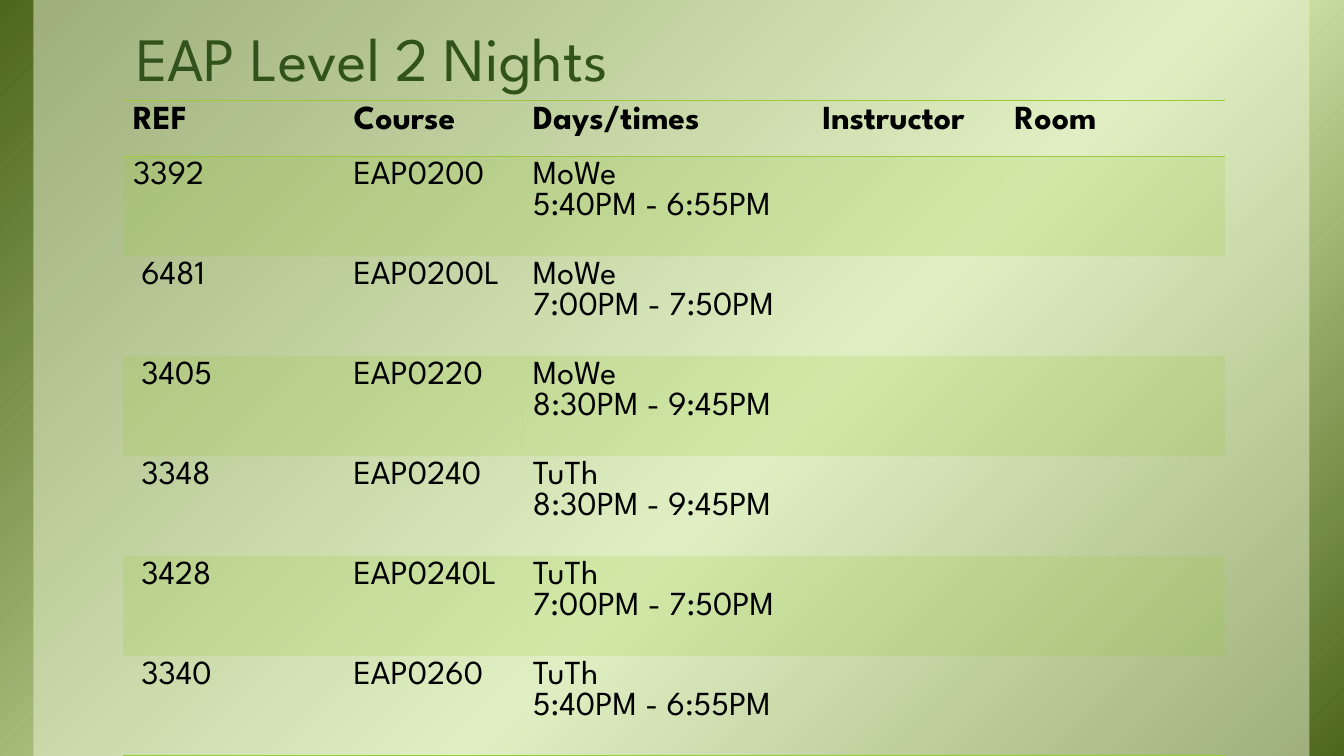
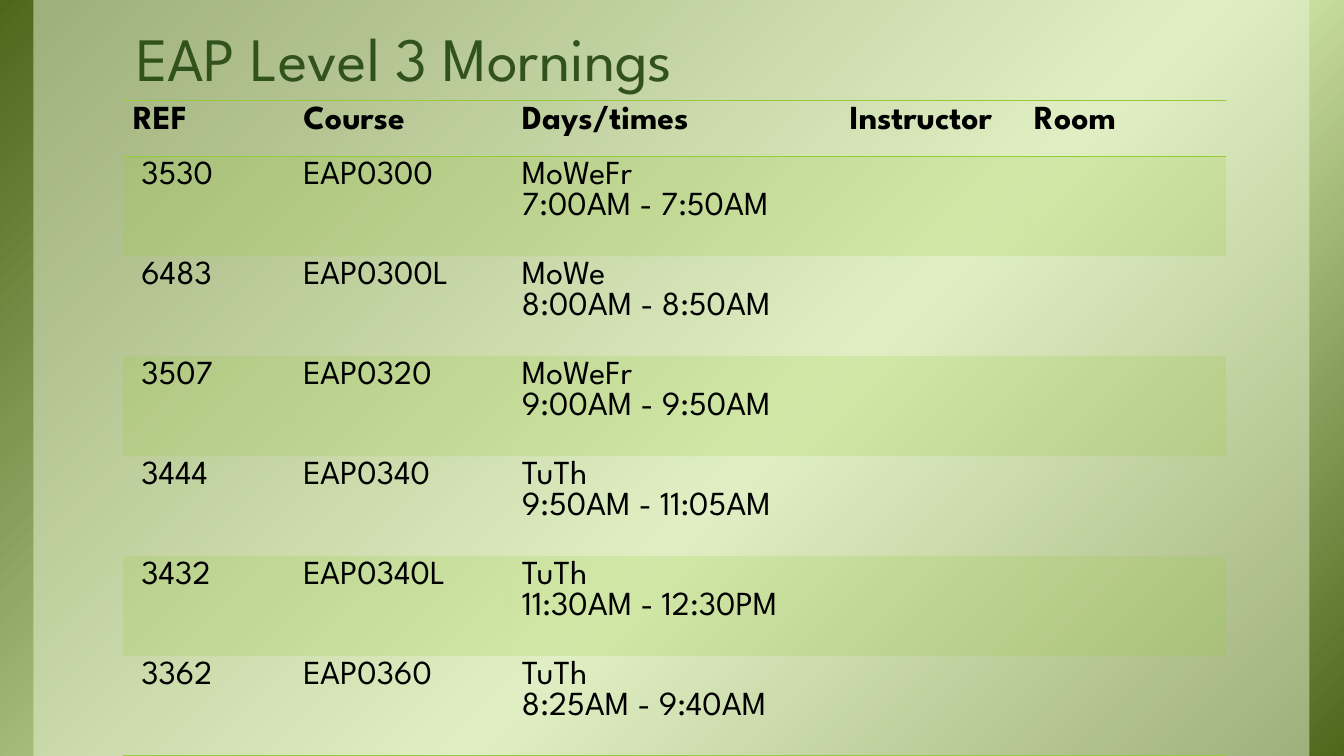
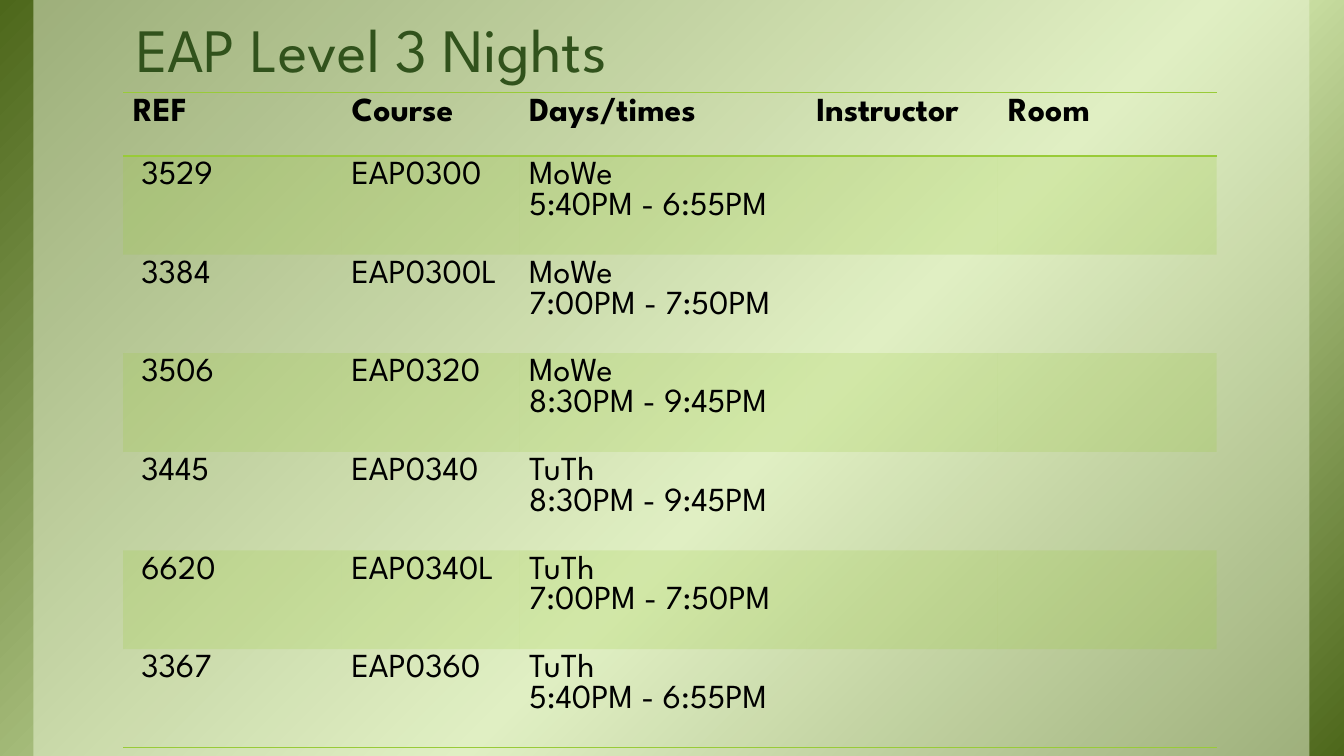
from lxml import etree
from pptx import Presentation
from pptx.dml import color
from pptx.enum import shapes, text
from pptx.oxml import ns, parse_xml
from pptx.util import Cm, Pt

C = {
    "dark": "4D671B",
    "light": "D6EAAF",
    "panel": "EBF5D7",
    "title": "31521C",
    "accent": "99CB38",
    "text": "000000",
}
FONT = "League Spartan"
WIDTH, HEIGHT = 33.87, 19.05
LEFT, TABLE_H = 3.1, 16.51
NO_STYLE = "{2D5ABB26-0587-4C30-8999-92F81FD0307C}"
HEADS = ["REF", "Course", "Days/times", "Instructor", "Room"]

SLIDES = [
    {
        "title": "EAP Level 2 Nights",
        "top": 2.54,
        "head": 1.4,
        "cols": [5.56, 4.52, 7.29, 4.85, 5.56],
        "flush": ["3392"],
        "rows": [
            ("3392", "EAP0200", "MoWe", "5:40PM - 6:55PM"),
            ("6481", "EAP0200L", "MoWe", "7:00PM - 7:50PM"),
            ("3405", "EAP0220", "MoWe", "8:30PM - 9:45PM"),
            ("3348", "EAP0240", "TuTh", "8:30PM - 9:45PM"),
            ("3428", "EAP0240L", "TuTh", "7:00PM - 7:50PM"),
            ("3340", "EAP0260", "TuTh", "5:40PM - 6:55PM"),
        ],
    },
    {
        "title": "EAP Level 3 Mornings",
        "top": 2.54,
        "head": 1.4,
        "cols": [4.29, 5.51, 8.26, 4.65, 5.08],
        "flush": [],
        "rows": [
            ("3530", "EAP0300", "MoWeFr", "7:00AM - 7:50AM"),
            ("6483", "EAP0300L", "MoWe", "8:00AM - 8:50AM"),
            ("3507", "EAP0320", "MoWeFr", "9:00AM - 9:50AM"),
            ("3444", "EAP0340", "TuTh", "9:50AM - 11:05AM"),
            ("3432", "EAP0340L", "TuTh", "11:30AM - 12:30PM"),
            ("3362", "EAP0360", "TuTh", "8:25AM - 9:40AM"),
        ],
    },
    {
        "title": "EAP Level 3 Nights",
        "top": 2.33,
        "head": 1.6,
        "cols": [5.51, 4.47, 7.24, 4.83, 5.51],
        "flush": [],
        "rows": [
            ("3529", "EAP0300", "MoWe", "5:40PM - 6:55PM"),
            ("3384", "EAP0300L", "MoWe", "7:00PM - 7:50PM"),
            ("3506", "EAP0320", "MoWe", "8:30PM - 9:45PM"),
            ("3445", "EAP0340", "TuTh", "8:30PM - 9:45PM"),
            ("6620", "EAP0340L", "TuTh", "7:00PM - 7:50PM"),
            ("3367", "EAP0360", "TuTh", "5:40PM - 6:55PM"),
        ],
    },
]


def rgb(name):
    return color.RGBColor.from_string(C[name])


def add_run(p, words, size, name, bold=False):
    r = p.add_run()
    r.text = words
    r.font.name = FONT
    r.font.size = Pt(size)
    r.font.bold = bold
    r.font.color.rgb = rgb(name)


def fill_clear(fill, element, name, percent):
    fill.solid()
    fill.fore_color.rgb = rgb(name)
    clr = element.find(".//" + ns.qn("a:srgbClr"))
    etree.SubElement(clr, ns.qn("a:alpha"), val=str(percent * 1000))


def add_rect(s, x, y, w, h):
    sp = s.shapes.add_shape(shapes.MSO_SHAPE.RECTANGLE, Cm(x), Cm(y), Cm(w), Cm(h))
    sp.shadow.inherit = False
    sp.line.fill.background()
    return sp


def add_backdrop(s, x, y, w, h):
    sp = add_rect(s, x, y, w, h)
    sp.fill.gradient()
    sp.fill.gradient_angle = 315
    stops = sp._element.find(".//" + ns.qn("a:gsLst"))
    for gs in list(stops):
        stops.remove(gs)
    for pos, name in [(0, "dark"), (58, "light"), (100, "dark")]:
        gs = etree.SubElement(stops, ns.qn("a:gs"), pos=str(pos * 1000))
        etree.SubElement(gs, ns.qn("a:srgbClr"), val=C[name])
    panel = add_rect(s, x + 0.84, y, w - 1.71, h)
    fill_clear(panel.fill, panel._element, "panel", 50)


def add_title(s, words, x, y, w, h):
    tf = s.shapes.add_textbox(Cm(x), Cm(y), Cm(w), Cm(h)).text_frame
    tf.word_wrap = True
    tf.vertical_anchor = text.MSO_ANCHOR.BOTTOM
    tf.margin_left = tf.margin_right = Cm(0.33)
    tf.margin_top = tf.margin_bottom = Cm(0.18)
    p = tf.paragraphs[0]
    p.line_spacing = 0.85
    add_run(p, words, 44, "title")


def add_borders(cell, sides):
    tcPr = cell._tc.get_or_add_tcPr()
    for i, side in enumerate(sides):
        tcPr.insert(i, parse_xml(
            f'<a:ln{side} {ns.nsdecls("a")} w="12700"><a:solidFill>'
            f'<a:srgbClr val="{C["accent"]}"/></a:solidFill></a:ln{side}>'))


def add_schedule(s, data, x, y, h):
    rows, cols = data["rows"], data["cols"]
    grid = [[[head] for head in HEADS]]
    grid += [[[ref], [course], [days, hours], [], []] for ref, course, days, hours in rows]
    frame = s.shapes.add_table(len(grid), len(cols), Cm(x), Cm(y), Cm(sum(cols)), Cm(h))
    frame._element.find(".//" + ns.qn("a:tableStyleId")).text = NO_STYLE
    table = frame.table
    for col, width in zip(table.columns, cols):
        col.width = Cm(width)
    for i, entries in enumerate(grid):
        table.rows[i].height = Cm(data["head"] if i == 0 else (h - data["head"]) / len(rows))
        for j, lines in enumerate(entries):
            cell = table.cell(i, j)
            if i % 2:
                fill_clear(cell.fill, cell._tc, "accent", 20)
            else:
                cell.fill.background()
            if i == 0:
                add_borders(cell, "TB")
            elif i == len(rows):
                add_borders(cell, "B")
            if i and j == 0 and lines[0] not in data["flush"]:
                cell.margin_left = Cm(0.46)
            tf = cell.text_frame
            for k, line in enumerate(lines):
                p = tf.add_paragraph() if k else tf.paragraphs[0]
                add_run(p, line, 24, "text", i == 0)


def build_slide(prs, data):
    s = prs.slides.add_slide(prs.slide_layouts[6])
    add_backdrop(s, 0, 0, WIDTH, HEIGHT)
    add_title(s, data["title"], LEFT, 0.2, 28.22, data["top"] - 0.2)
    add_schedule(s, data, LEFT, data["top"], TABLE_H)


def main():
    prs = Presentation()
    prs.slide_width, prs.slide_height = Cm(WIDTH), Cm(HEIGHT)
    for data in SLIDES:
        build_slide(prs, data)
    prs.save("out.pptx")


if __name__ == "__main__":
    main()
